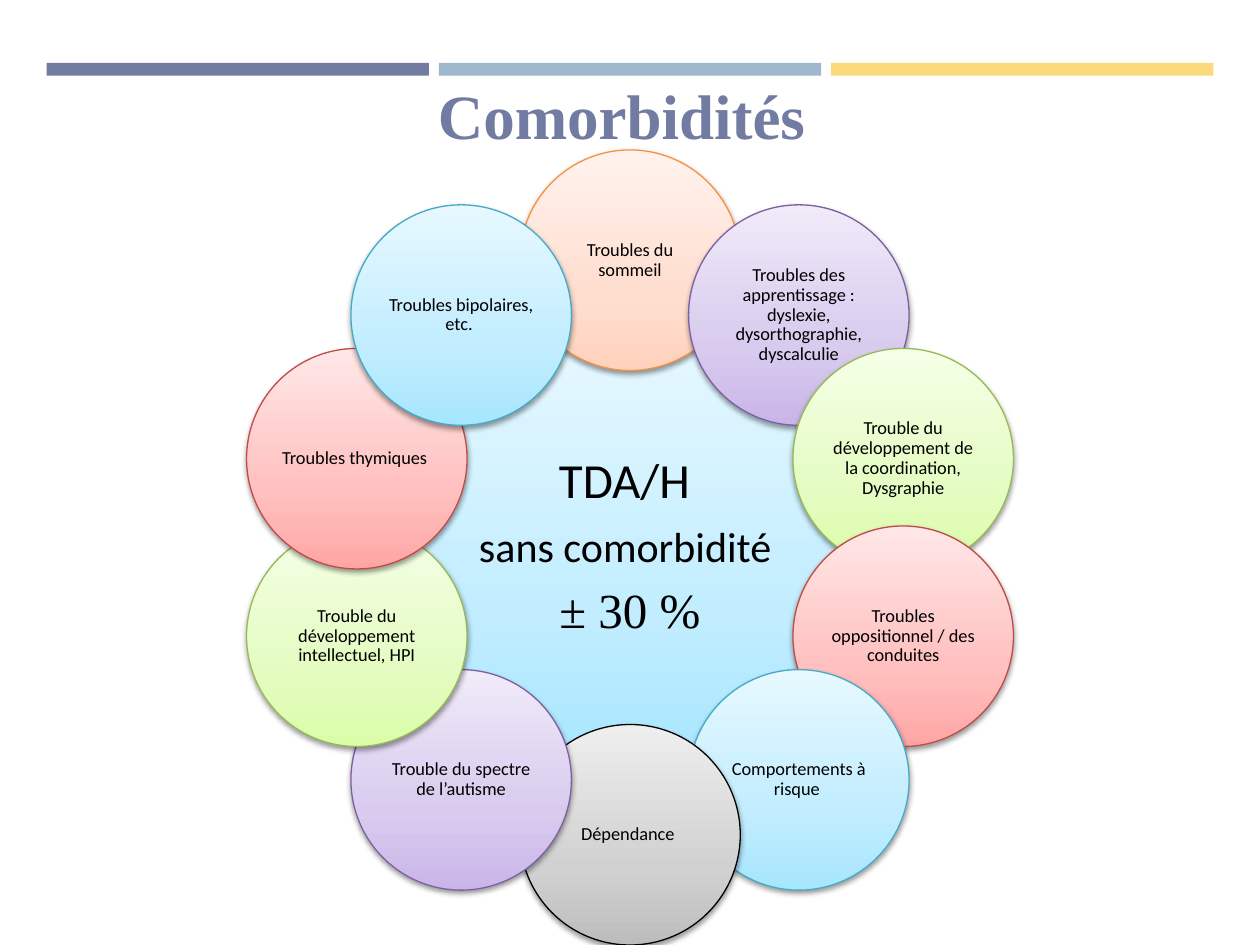
from copy import deepcopy
from math import cos, radians, sin

from lxml import etree
from pptx import Presentation
from pptx.dml.color import RGBColor
from pptx.enum.shapes import MSO_SHAPE
from pptx.enum.text import MSO_ANCHOR, PP_ALIGN
from pptx.oxml.ns import qn
from pptx.util import Inches, Pt

# Gradient from bottom to top, then the outline
BLUE = ("A7E6FF", "C1EDFF", "E7F8FF", "46AAC5")
ORANGE = ("FFD2BD", "FFDED0", "FFF2ED", "F69240")
PURPLE = ("C9B5E8", "D8CBEE", "F0EAF9", "7D60A0")
GREEN = ("DAFDA7", "E4FCC2", "F5FFE7", "98B955")
RED = ("FFA6A5", "FFC0BF", "FFE7E7", "BF4C48")
GREY = ("BDBDBD", "D1D1D1", "EEEEEE", "000000")
GRADIENT_POSITIONS = (0, 0.35, 1)

# Clockwise from the top
DISORDERS = [
    ("Troubles du sommeil", ORANGE),
    ("Troubles des apprentissage : dyslexie, dysorthographie, dyscalculie", PURPLE),
    ("Trouble du développement de la coordination, Dysgraphie", GREEN),
    ("Troubles oppositionnel / des conduites", RED),
    ("Comportements à risque ", BLUE),
    ("Dépendance ", GREY),
    ("Trouble du spectre de l’autisme", PURPLE),
    ("Trouble du développement intellectuel, HPI", GREEN),
    ("Troubles thymiques ", RED),
    ("Troubles bipolaires, etc. ", BLUE),
]


def color(hex_value):
    return RGBColor.from_string(hex_value)


def set_frame(frame, inset, anchor):
    frame.word_wrap = True
    frame.vertical_anchor = anchor
    frame.margin_left = frame.margin_right = Inches(inset)
    frame.margin_top = frame.margin_bottom = Inches(inset)


def write(frame, text, size, font="Calibri", fill="000000", bold=False,
          line_spacing=0.9, space_after=0.35, first=True):
    paragraph = frame.paragraphs[0] if first else frame.add_paragraph()
    paragraph.alignment = PP_ALIGN.CENTER
    paragraph.line_spacing = line_spacing
    paragraph.space_after = Pt(round(size * space_after, 1))
    run = paragraph.add_run()
    run.text = text
    run.font.name = font
    run.font.size = Pt(size)
    run.font.bold = bold
    run.font.color.rgb = color(fill)


def add_shadow(shape):
    shape.shadow.inherit = False
    effects = shape._element.spPr.find(qn("a:effectLst"))
    shadow = etree.SubElement(effects, qn("a:outerShdw"), blurRad=str(Pt(3.1)),
                              dist=str(Pt(1.6)), dir="5400000", rotWithShape="0")
    black = etree.SubElement(shadow, qn("a:srgbClr"), val="000000")
    etree.SubElement(black, qn("a:alpha"), val="38000")


def add_circle(slide, center_x, center_y, width, height, palette, inset):
    circle = slide.shapes.add_shape(
        MSO_SHAPE.OVAL, Inches(center_x - width / 2), Inches(center_y - height / 2),
        Inches(width), Inches(height))
    *tints, outline = palette
    circle.fill.gradient()
    circle.fill.gradient_angle = 90
    stop_list = circle._element.spPr.find(qn("a:gradFill")).find(qn("a:gsLst"))
    stop_list.append(deepcopy(stop_list[-1]))
    for stop, tint, position in zip(circle.fill.gradient_stops, tints, GRADIENT_POSITIONS):
        stop.color.rgb = color(tint)
        stop.position = position
    circle.line.color.rgb = color(outline)
    circle.line.width = Pt(0.75)
    add_shadow(circle)
    set_frame(circle.text_frame, inset, MSO_ANCHOR.MIDDLE)
    return circle.text_frame


def add_header_bars(slide, left, top, width, height):
    gap = 0.08
    fills = ("727CA3", "9FB8CD", "FADA7A")
    bar_width = (width - gap * (len(fills) - 1)) / len(fills)
    for index, fill in enumerate(fills):
        bar = slide.shapes.add_shape(
            MSO_SHAPE.RECTANGLE, Inches(left + index * (bar_width + gap)), Inches(top),
            Inches(bar_width), Inches(height))
        bar.fill.solid()
        bar.fill.fore_color.rgb = color(fill)
        bar.line.fill.background()
        bar.shadow.inherit = False


def add_title(slide, left, top, width, height):
    title = slide.shapes.add_textbox(Inches(left), Inches(top), Inches(width), Inches(height))
    set_frame(title.text_frame, 0, MSO_ANCHOR.BOTTOM)
    write(title.text_frame, "Comorbidités ", 36, font="Times New Roman", fill="727CA3",
          bold=True, line_spacing=1.0, space_after=0)


def add_comorbidity_wheel(slide, left, top, width, height):
    center_x, center_y = left + width / 2, top + height / 2
    diameter = 1.75
    radius = (height - diameter) / 2

    # Hub
    hub = add_circle(slide, center_x, center_y, 3.83, 3.5, BLUE, 0.04)
    write(hub, "TDA/H ", 28)
    write(hub, "sans comorbidité ", 24, first=False)
    write(hub, "± 30 %", 28, font="Times New Roman", first=False)

    # Ring of associated disorders
    for index, (disorder, palette) in enumerate(DISORDERS):
        angle = radians(index * 360 / len(DISORDERS))
        label = add_circle(slide, center_x + radius * sin(angle),
                           center_y - radius * cos(angle),
                           diameter, diameter, palette, 0.02)
        write(label, disorder, 10.5)


def main():
    presentation = Presentation()
    presentation.slide_width = Inches(10)
    presentation.slide_height = Inches(7.5)
    slide = presentation.slides.add_slide(presentation.slide_layouts[6])
    add_header_bars(slide, 0.37, 0.5, 9.26, 0.1)
    add_title(slide, 1.42, 0.6, 7.15, 0.61)
    add_comorbidity_wheel(slide, 1.96, 1.19, 6.08, 6.31)
    presentation.save("out.pptx")


if __name__ == "__main__":
    main()
